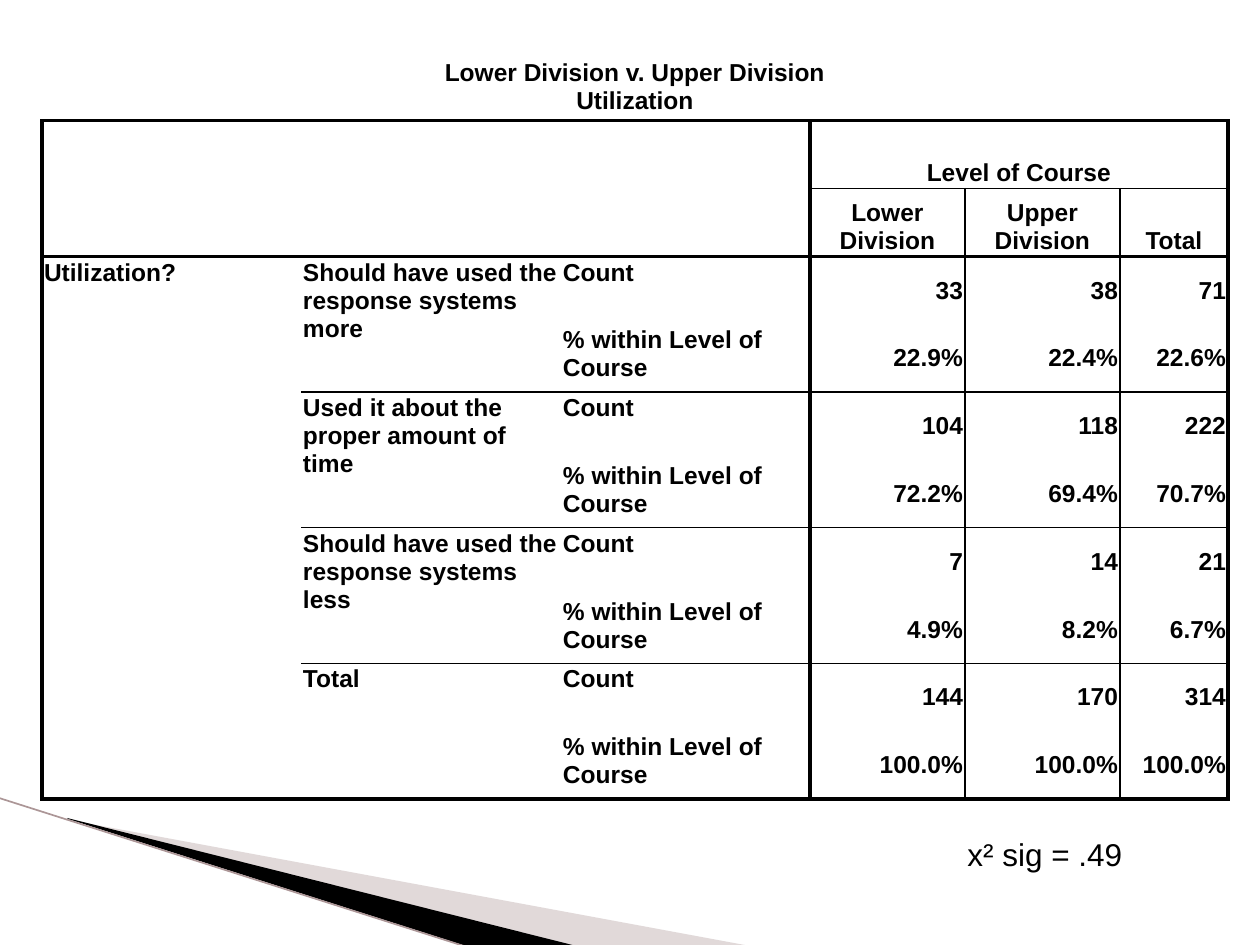
"""Build a slide with a cross table of course level and utilization."""
from lxml.etree import SubElement as Sub
from pptx import Presentation as Deck
from pptx.dml.color import RGBColor as Rgb
from pptx.enum.shapes import MSO_CONNECTOR as Link
from pptx.enum.text import MSO_ANCHOR as Anchor, MSO_AUTO_SIZE as Auto, PP_ALIGN as Align
from pptx.oxml.ns import qn
from pptx.util import Emu, Pt

BLACK = Rgb(0x00, 0x00, 0x00)
WHITE = Rgb(0xFF, 0xFF, 0xFF)
MAUVE = Rgb(0xB4, 0xA0, 0xA1)
ROSE = Rgb(0xAC, 0x96, 0x97)
THICK, THIN = 2.25, 1
WIDTHS = [259, 260, 249, 155, 155, 108]
GROUPS = [
    ("Should have used the response systems more",
     ["33", "38", "71"], ["22.9%", "22.4%", "22.6%"]),
    ("Used it about the proper amount of time",
     ["104", "118", "222"], ["72.2%", "69.4%", "70.7%"]),
    ("Should have used the response systems less",
     ["7", "14", "21"], ["4.9%", "8.2%", "6.7%"]),
    ("Total", ["144", "170", "314"], ["100.0%"] * 3),
]


def px(num):
    return Emu(round(num * 914400 / 126))


def flat(row, col):
    if row in (1, 3, 11):
        return THICK
    if row == 2 and col > 2 or row in (5, 7, 9) and col > 0:
        return THIN
    return 0


def wall(row, col):
    if row and col in (0, 3, 6):
        return THICK
    return THIN if row > 1 and col in (4, 5) else 0


class Page:
    """Hold the text style and the current slide."""

    def __init__(self, slide):
        self.slide = slide
        self.font = {"name": "Arial", "size": Pt(14), "bold": True}

    def words(self, frame, text, align=Align.LEFT, gap=None, **extra):
        frame.text = text
        for para in frame.paragraphs:
            para.alignment = align
            para.line_spacing = gap
            for run in para.runs:
                for key, val in {**self.font, **extra}.items():
                    setattr(run.font, key, val)
                run.font.color.rgb = BLACK

    def wedge(self, points, color, alpha=100):
        start, *rest = [(px(x), px(y)) for x, y in points]
        form = self.slide.shapes.build_freeform(*start, scale=1.0)
        form.add_line_segments(rest, close=True)
        shape = form.convert_to_shape()
        shape.shadow.inherit = False
        shape.fill.solid()
        shape.fill.fore_color.rgb = color
        shape.line.fill.background()
        if alpha < 100:
            tint = shape._element.spPr.find(".//" + qn("a:srgbClr"))
            Sub(tint, qn("a:alpha"), val=str(alpha * 1000))

    def line(self, start, end, color, width):
        ends = [px(num) for num in (*start, *end)]
        line = self.slide.shapes.add_connector(Link.STRAIGHT, *ends)
        line.line.color.rgb = color
        line.line.width = Pt(width)
        Sub(line._element.spPr, qn("a:effectLst"))

    def label(self, box, text):
        frame = self.slide.shapes.add_textbox(*map(px, box)).text_frame
        frame.word_wrap = True
        frame.auto_size = Auto.SHAPE_TO_FIT_TEXT
        self.words(frame, text, size=Pt(18), bold=False)

    def grid(self, left, top, widths, height, rows):
        box = map(px, (left, top, sum(widths), height))
        table = self.slide.shapes.add_table(rows, len(widths), *box).table
        table.first_row = table.horz_banding = False
        for col, width in zip(table.columns, widths):
            col.width = px(width)
        for row in table.rows:
            row.height = px(height / rows)
        return table

    def cell(self, cell, text, align=Align.LEFT, anchor=Anchor.TOP):
        form = {"vertical_anchor": anchor}
        form.update({"margin_" + side: px(2) for side in ("left", "right", "top", "bottom")})
        for key, val in form.items():
            setattr(cell, key, val)
        self.words(cell.text_frame, text, align, Pt(16))

    def rule(self, cell, row, col):
        high, wide = (cell.span_height, cell.span_width) if cell.is_merge_origin else (1, 1)
        sides = {"L": wall(row, col), "R": wall(row, col + wide),
                 "T": flat(row, col), "B": flat(row + high, col)}
        props = cell._tc.get_or_add_tcPr()
        for side, width in sides.items():
            edge = Sub(props, qn("a:ln" + side), w=str(int(Pt(width))))
            if width:
                Sub(Sub(edge, qn("a:solidFill")), qn("a:srgbClr"), val=str(BLACK))
            else:
                Sub(edge, qn("a:noFill"))
        cell.fill.solid()
        cell.fill.fore_color.rgb = WHITE


def fill(page, table):
    at = table.cell
    spans = [(0, 0, 0, 5), (1, 3, 1, 5), (3, 0, 10, 0)]
    spans += [(row, 1, row + 1, 1) for row in (3, 5, 7, 9)]
    for top, left, end, right in spans:
        at(top, left).merge(at(end, right))
    page.cell(at(0, 0), "Lower Division v. Upper Division\nUtilization",
              Align.CENTER, Anchor.MIDDLE)
    page.cell(at(1, 3), "Level of Course", Align.CENTER, Anchor.BOTTOM)
    for col, text in enumerate(["Lower Division", "Upper Division", "Total"], 3):
        page.cell(at(2, col), text, Align.CENTER, Anchor.BOTTOM)
    page.cell(at(3, 0), "Utilization?")
    for num, (name, *lines) in enumerate(GROUPS):
        top = 3 + 2 * num
        page.cell(at(top, 1), name)
        for row, (kind, vals) in enumerate(zip(["Count", "% within Level of Course"], lines), top):
            page.cell(at(row, 2), kind)
            for col, val in enumerate(vals, 3):
                page.cell(at(row, col), val, Align.RIGHT, Anchor.MIDDLE)
    for row in range(len(table.rows)):
        for col in range(len(table.columns)):
            page.rule(at(row, col), row, col)


def main():
    deck = Deck()
    deck.slide_width, deck.slide_height = px(1260), px(945)
    page = Page(deck.slides.add_slide(deck.slide_layouts[6]))
    page.wedge([(69, 820), (750, 946), (575, 946), (69, 819)], MAUVE, 40)
    page.wedge([(67, 818), (576, 946), (469, 947), (68, 819)], BLACK)
    page.line((-1, 798), (467, 947), ROSE, 0.95)
    page.label((955, 829, 273, 53), "x² sig = .49")
    fill(page, page.grid(42, 53, WIDTHS, 746, 11))
    deck.save("out.pptx")


if __name__ == "__main__":
    main()
